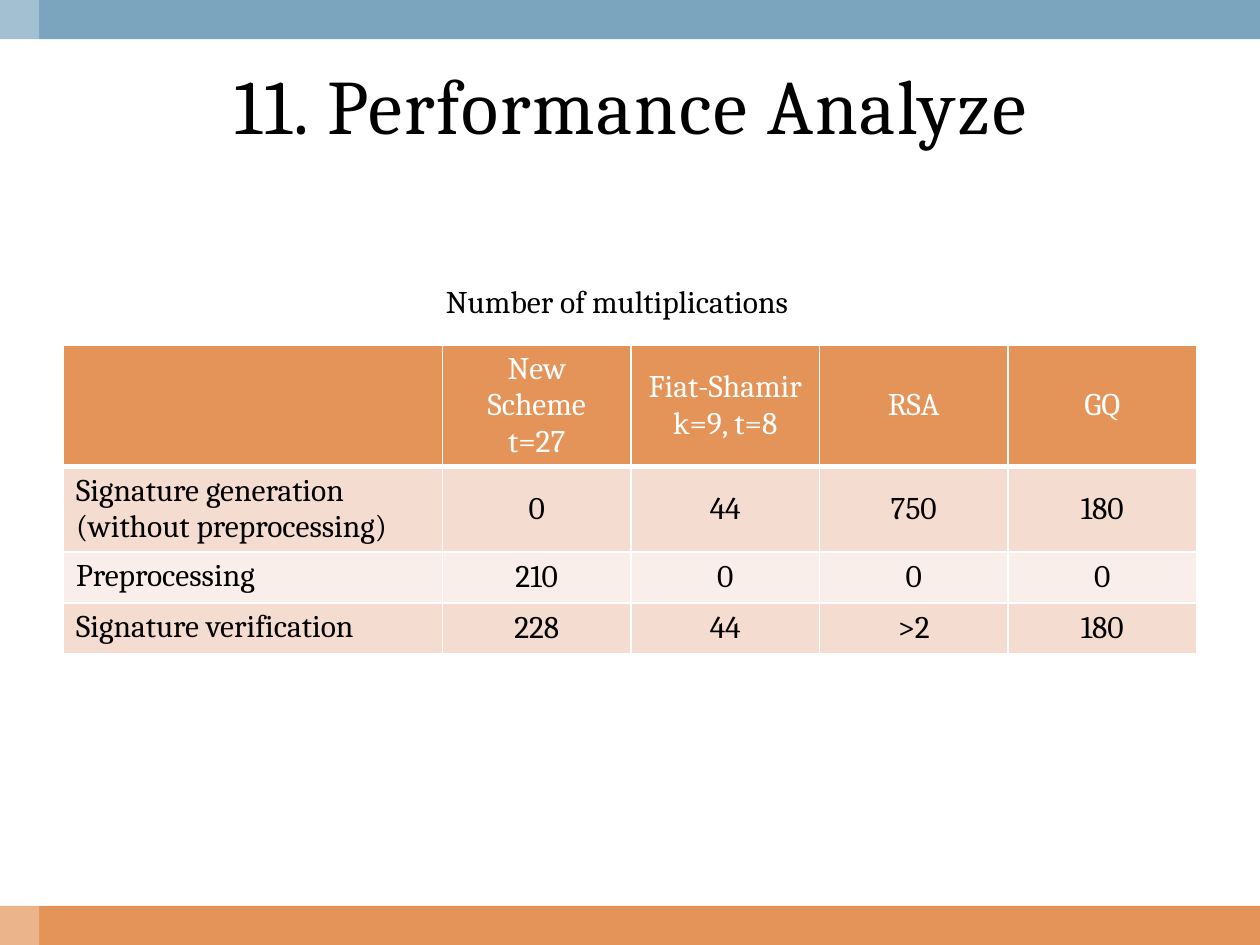
from lxml import etree
from pptx import Presentation
from pptx import util as u
from pptx.dml.color import RGBColor
from pptx.enum import shapes, text
from pptx.oxml.ns import qn

COLORS = {
    "orange": "E49458",
    "blue": "7BA5BE",
    "white": "FFFFFF",
    "black": "000000",
    "dark band": "F5DCD1",
    "light band": "FAEEEA",
}
WIDTH, HEIGHT, BAR = 25.4, 19.05, 0.79

ROWS = [
    ["", "New Scheme\nt=27", "Fiat-Shamir\nk=9, t=8", "RSA", "GQ"],
    ["Signature generation\n(without preprocessing)", "0", "44", "750", "180"],
    ["Preprocessing", "210", "0", "0", "0"],
    ["Signature verification", "228", "44", ">2", "180"],
]
COLUMN_WIDTHS = [7.64] + [3.8] * 4
ROW_HEIGHTS = [2.44, 1.71, 1.03, 1.03]


def rgb(name):
    return RGBColor.from_string(COLORS[name])


class SlideBuilder:
    font = "Cambria"
    body_size = 18
    title_size = 44

    def __init__(self, slide):
        self.slide = slide

    def format_text(self, frame, size, color, align):
        for paragraph in frame.paragraphs:
            paragraph.alignment = align
            for run in paragraph.runs:
                run.font.name = self.font
                run.font.size = u.Pt(size)
                run.font.bold = False
                run.font.color.rgb = rgb(color)

    def bar(self, left, top, width, height, color, alpha=None):
        """Draw a plain rectangle; alpha is its opacity in percent."""
        shape = self.slide.shapes.add_shape(
            shapes.MSO_SHAPE.RECTANGLE, *map(u.Cm, (left, top, width, height)))
        shape.shadow.inherit = False
        shape.fill.solid()
        shape.fill.fore_color.rgb = rgb(color)
        shape.line.fill.background()
        if alpha is not None:
            tint = shape.fill._xPr.find(".//" + qn("a:srgbClr"))
            etree.SubElement(tint, qn("a:alpha"), val=str(alpha * 1000))

    def title(self, words, left, top, width, height):
        title = self.slide.shapes.title
        title.left, title.top, title.width, title.height = map(
            u.Cm, (left, top, width, height))
        frame = title.text_frame
        frame.text = words
        frame.vertical_anchor = text.MSO_ANCHOR.MIDDLE
        self.format_text(frame, self.title_size, "black", text.PP_ALIGN.CENTER)
        frame.paragraphs[0].runs[0].font._element.set("spc", "100")

    def caption(self, words, left, top, width, height):
        box = self.slide.shapes.add_textbox(*map(u.Cm, (left, top, width, height)))
        frame = box.text_frame
        frame.word_wrap = True
        frame.auto_size = text.MSO_AUTO_SIZE.SHAPE_TO_FIT_TEXT
        frame.text = words
        self.format_text(frame, self.body_size, "black", text.PP_ALIGN.LEFT)

    def borders(self, cell, bottom):
        properties = cell._tc.get_or_add_tcPr()
        for side, points in (("L", 1), ("R", 1), ("T", 1), ("B", bottom)):
            line = etree.SubElement(properties, qn(f"a:ln{side}"), w=str(u.Pt(points)))
            fill = etree.SubElement(line, qn("a:solidFill"))
            etree.SubElement(fill, qn("a:srgbClr"), val=COLORS["white"])

    def table(self, rows, left, top, widths, heights):
        table = self.slide.shapes.add_table(
            len(rows), len(widths), u.Cm(left), u.Cm(top),
            u.Cm(sum(widths)), u.Cm(sum(heights))).table
        for column, width in zip(table.columns, widths):
            column.width = u.Cm(width)
        for r, (row, height) in enumerate(zip(rows, heights)):
            table.rows[r].height = u.Cm(height)
            header = r == 0
            band = "orange" if header else "dark band" if r % 2 else "light band"
            for c, words in enumerate(row):
                cell = table.cell(r, c)
                self.borders(cell, bottom=3 if header else 1)
                cell.fill.solid()
                cell.fill.fore_color.rgb = rgb(band)
                cell.text_frame.text = words
                label = c == 0
                cell.vertical_anchor = (
                    text.MSO_ANCHOR.TOP if label else text.MSO_ANCHOR.MIDDLE)
                self.format_text(
                    cell.text_frame, self.body_size, "white" if header else "black",
                    text.PP_ALIGN.LEFT if label else text.PP_ALIGN.CENTER)


def main():
    deck = Presentation()
    deck.slide_width, deck.slide_height = u.Cm(WIDTH), u.Cm(HEIGHT)
    builder = SlideBuilder(deck.slides.add_slide(deck.slide_layouts[5]))
    builder.bar(0, HEIGHT - BAR, WIDTH, BAR, "orange")
    builder.bar(0, 0, WIDTH, BAR, "blue")
    builder.bar(0, 0, BAR, HEIGHT, "white", alpha=30)
    builder.title("11. Performance Analyze", 0.84, 0.79, 23.77, 2.62)
    builder.table(ROWS, 1.28, 6.95, COLUMN_WIDTHS, ROW_HEIGHTS)
    builder.caption("Number of multiplications", 8.74, 5.56, 8.13, 1.02)
    deck.save("out.pptx")


if __name__ == "__main__":
    main()
